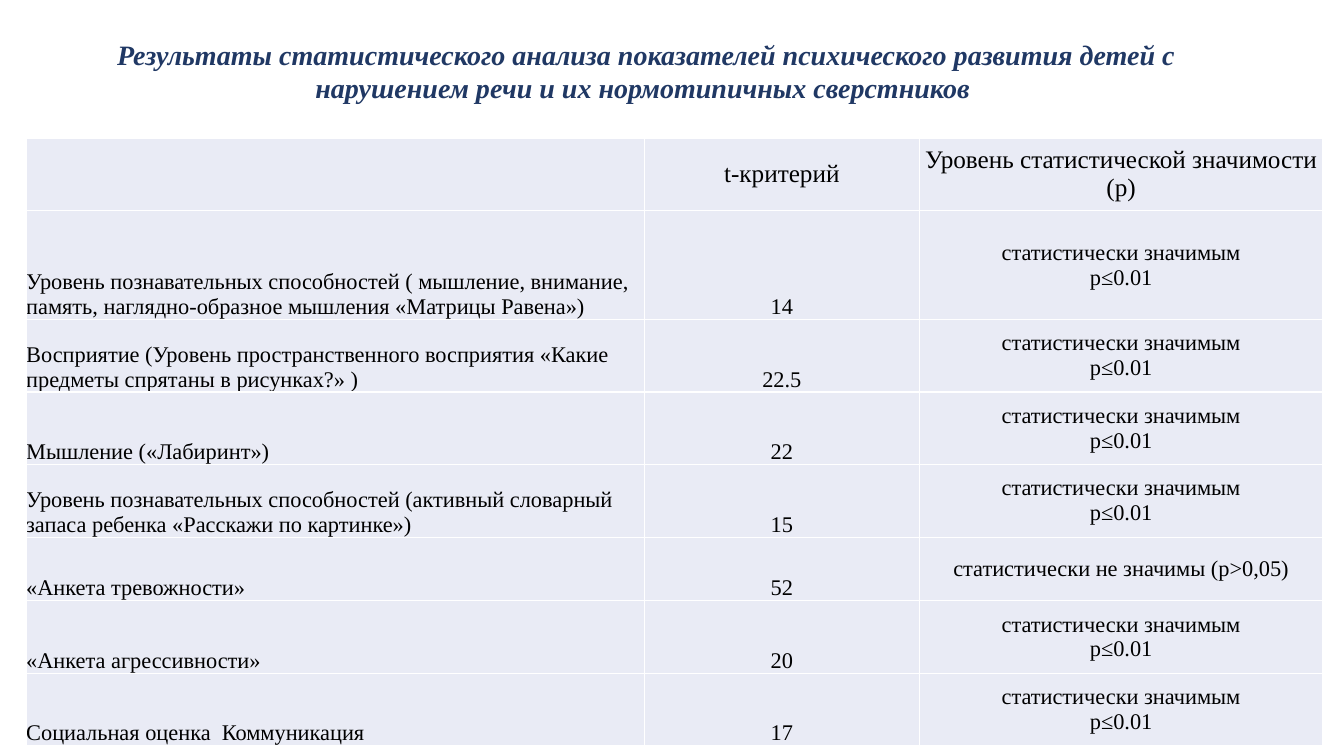
"""Build a slide with a table of statistical results for child development."""
from lxml.etree import SubElement
from pptx import Presentation
from pptx.dml.color import RGBColor
from pptx.enum.text import MSO_ANCHOR as Anchor, MSO_AUTO_SIZE as Fit, PP_ALIGN as Align
from pptx.oxml.ns import qn
from pptx.util import Inches, Pt

TITLE = ("Результаты статистического анализа показателей психического развития "
         "детей с нарушением речи и их нормотипичных сверстников ")
YES = "статистически значимым\vp≤0.01"
NO = "статистически не значимы (р>0,05)"
ROWS = [
    ("", "t-критерий", "Уровень статистической значимости (p)"),
    ("Уровень познавательных способностей ( мышление, внимание, память, "
     "наглядно-образное мышления «Матрицы Равена»)", "14", YES),
    ("Восприятие (Уровень пространственного восприятия "
     "«Какие предметы спрятаны в рисунках?» )", "22.5", YES),
    ("Мышление («Лабиринт»)", "22", YES),
    ("Уровень познавательных способностей (активный словарный запаса ребенка "
     "«Расскажи по картинке»)", "15", YES),
    ("«Анкета тревожности»", "52", NO),
    ("«Анкета агрессивности»", "20", YES),
    ("Социальная оценка  Коммуникация", "17", YES),
]
WIDTHS = [6.13, 2.73, 4]
HEIGHTS = [0.72, 1.08, 0.72, 0.72, 0.72, 0.63, 0.72, 0.72]
FONT, NAVY, BLACK, PALE, WHITE = "Times New Roman", "203864", "000000", "E9EBF5", "FFFFFF"


def color(code):
    return RGBColor.from_string(code)


def style(par, size, code, align):
    par.alignment = align
    par.font.name, par.font.size = FONT, Pt(size)
    par.font.color.rgb = color(code)


def border(cell):
    props = cell._tc.get_or_add_tcPr()
    for side in ("a:lnL", "a:lnR", "a:lnT", "a:lnB"):
        line = SubElement(props, qn(side), w=str(Pt(1)))
        fill = SubElement(line, qn("a:solidFill"))
        SubElement(fill, qn("a:srgbClr"), val=WHITE)


def add_title(slide):
    title = slide.shapes.title
    title.left, title.top = Inches(0.61), Inches(0.32)
    title.width, title.height = Inches(11.6), Inches(0.77)
    frame = title.text_frame
    frame.text = TITLE
    frame.word_wrap, frame.auto_size = True, Fit.SHAPE_TO_FIT_TEXT
    frame.vertical_anchor = Anchor.TOP
    par = frame.paragraphs[0]
    style(par, 20, NAVY, Align.CENTER)
    par.font.bold = par.font.italic = True


def fill_cell(cell, text, row, col):
    border(cell)
    cell.fill.solid()
    cell.fill.fore_color.rgb = color(PALE)
    cell.margin_left = cell.margin_right = cell.margin_top = cell.margin_bottom = 0
    middle = row == 0 or col == 2
    cell.vertical_anchor = Anchor.MIDDLE if middle else Anchor.BOTTOM
    cell.text_frame.text = text
    style(cell.text_frame.paragraphs[0], 16 if row else 18, BLACK,
          Align.CENTER if col else Align.LEFT)


def add_results(slide):
    table = slide.shapes.add_table(
        len(ROWS), len(WIDTHS), Inches(0.26), Inches(1.37),
        Inches(sum(WIDTHS)), Inches(sum(HEIGHTS))).table
    table.first_row = table.horz_banding = False
    for col, width in zip(table.columns, WIDTHS):
        col.width = Inches(width)
    for row, height in zip(table.rows, HEIGHTS):
        row.height = Inches(height)
    for row, texts in enumerate(ROWS):
        for col, text in enumerate(texts):
            fill_cell(table.cell(row, col), text, row, col)


def main():
    deck = Presentation()
    deck.slide_width, deck.slide_height = Inches(13.33), Inches(7.5)
    slide = deck.slides.add_slide(deck.slide_layouts[5])
    add_title(slide)
    add_results(slide)
    deck.save("out.pptx")


if __name__ == "__main__":
    main()
